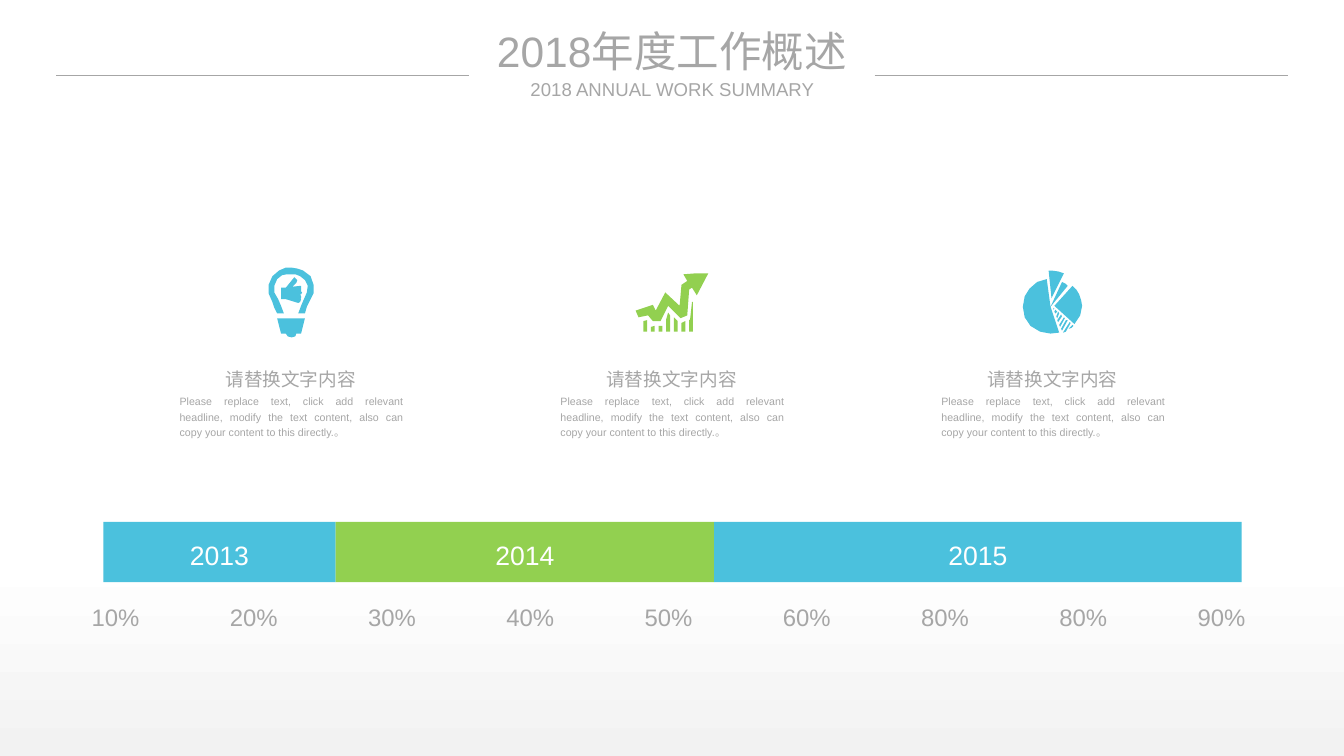
from lxml import etree
from pptx import Presentation
from pptx.dml.color import RGBColor
from pptx.enum.shapes import MSO_CONNECTOR, MSO_SHAPE
from pptx.enum.text import MSO_ANCHOR, MSO_AUTO_SIZE, PP_ALIGN
from pptx.oxml.ns import qn
from pptx.util import Pt

RECT = MSO_SHAPE.RECTANGLE
STRAIGHT = MSO_CONNECTOR.STRAIGHT
TOP, MIDDLE = MSO_ANCHOR.TOP, MSO_ANCHOR.MIDDLE
CENTER, JUSTIFY = PP_ALIGN.CENTER, PP_ALIGN.JUSTIFY
GROW = MSO_AUTO_SIZE.SHAPE_TO_FIT_TEXT

WIDTH, HEIGHT = 1012.3, 569.5
FONT = "Arial"
COLORS = {"gray": "A6A6A6", "blue": "4BC1DD", "green": "92D050",
          "white": "FFFFFF", "shade": "F2F2F2"}

HEADING = "请替换文字内容"
BODY = ("Please replace text, click add relevant headline, modify the text "
        "content, also can copy your content to this directly.。")
CAPTION_X, CAPTION_STEP = 128.2, 286.9
PERCENTS = ["10%", "20%", "30%", "40%", "50%", "60%", "80%", "80%", "90%"]
PERCENT_X, PERCENT_STEP = 61.9, 104.13
BARS = [("2013", 175, "blue"), ("2014", 285.1, "green"), ("2015", 397.4, "blue")]
BAR_X = 77.8

# Icon outlines, in units of ICON_UNIT points from the icon's corner
ICON_UNIT = 0.72
BULB = [
    # Socket
    [(11, 54), (40, 54), (36, 70), (31, 70), (29.5, 73), (26, 74), (22, 73),
     (20, 70), (15, 70)],
    # Thumb
    [(36, 20), (36, 26), (37, 27), (36, 29), (35, 29), (36, 31), (36, 33),
     (35, 34), (36, 34), (35, 37), (33, 38), (20, 34), (15, 34), (15, 22),
     (20, 22), (29, 11), (31.7, 13.5), (31.4, 16.8), (27, 21)],
    # Glass
    [(11, 49), (18, 49), (15.4, 40.8), (12, 34), (8.5, 26.6), (8, 20),
     (10.9, 13.4), (16, 9), (20.6, 7.8), (26, 8), (30.5, 8.2), (35, 10),
     (40.1, 14.3), (43, 20), (42, 26.6), (39, 34), (35.6, 40.8), (33, 49),
     (40, 49), (42.1, 42.5), (45, 36), (48.9, 27.9), (49, 19), (45.8, 10),
     (38, 4), (32, 1.6), (26, 1), (19.5, 1.4), (13, 4), (5.6, 9.6), (2, 19),
     (2.1, 28), (6, 37), (8.5, 42.6)],
]
GROWTH = [
    # Arrow
    [(76, 0), (64, 23), (59, 15), (56, 17), (54, 44), (47, 47), (34, 34),
     (26, 50), (18, 50), (13, 44), (3, 46), (0, 39), (18, 33), (21, 39),
     (31, 20), (46, 34), (48, 12), (54, 8), (50, 1), (63, 0)],
    # Columns
    [(8, 61), (12, 61), (12, 49), (8, 50)],
    [(16, 61), (20, 61), (20, 55), (16, 56)],
    [(24, 61), (28, 61), (28, 55), (24, 55)],
    [(32, 61), (36, 61), (36, 44), (34, 41), (32, 48)],
    [(40, 61), (44, 61), (44, 50), (40, 46)],
    [(48, 61), (52, 61), (52, 50), (48, 52)],
    [(56, 61), (60, 61), (60, 30), (59, 30), (57, 48), (56, 49)],
]
PIE = [
    # Main slices
    [(52, 16), (56, 20), (59.2, 25), (61.4, 30.7), (62, 37), (59.9, 47.2),
     (54, 56), (33, 37)],
    [(41, 12), (29, 38), (25, 9), (15.2, 12.3), (7.2, 18.6), (1.9, 27.4),
     (0, 38), (2.3, 49.1), (8.5, 58), (17.7, 63.8), (29, 66), (38, 65),
     (29, 38), (47, 16), (44.7, 13.5)],
    [(30, 0), (27, 0), (30, 29), (43, 3), (36.6, 0.9)],
    # Hatched slice
    [(53, 58), (51, 60), (48, 61), (52, 57)],
    [(45, 64), (50, 55), (49, 54), (42, 65)],
    [(41, 63), (47, 52), (45, 52), (40, 61)],
    [(39, 59), (44, 50), (43, 49), (38, 57)],
    [(37, 54), (41, 48), (40, 46), (36, 52)],
    [(36, 50), (38, 45), (37, 43), (35, 48)],
    [(34, 45), (36, 43), (34, 41), (33, 43)],
    [(32, 41), (32, 39), (33, 40)],
]
ICONS = [(BULB, 200.9, 200.9, "blue"), (GROWTH, 478.8, 205.9, "green"),
         (PIE, 770.4, 203.8, "blue")]


def rgb(name):
    return RGBColor.from_string(COLORS[name])


def write(sp, text, size, color="gray", align=JUSTIFY, anchor=TOP,
          spacing=1.2, wrap=True, inset=None):
    tf = sp.text_frame
    tf.word_wrap = wrap
    tf.vertical_anchor = anchor
    if inset is not None:
        tf.margin_left = tf.margin_right = Pt(inset)
        tf.margin_top = tf.margin_bottom = Pt(inset)
    p = tf.paragraphs[0]
    p.alignment = align
    p.line_spacing = spacing
    r = p.add_run()
    r.text = text
    r.font.name = FONT
    r.font.size = Pt(size)
    r.font.color.rgb = rgb(color)


def add_text(s, x, y, w, h, text, size, **fmt):
    sp = s.shapes.add_textbox(Pt(x), Pt(y), Pt(w), Pt(h))
    write(sp, text, size, **fmt)
    sp.text_frame.auto_size = GROW
    return sp


def add_rect(s, x, y, w, h):
    sp = s.shapes.add_shape(RECT, Pt(x), Pt(y), Pt(w), Pt(h))
    sp.shadow.inherit = False
    sp.line.fill.background()
    return sp


def add_backdrop(s):
    sp = add_rect(s, 0, 0, WIDTH, HEIGHT)
    sp.fill.gradient()
    sp.fill.gradient_angle = 90
    for stop, color, pos in zip(sp.fill.gradient_stops, ("shade", "white"), (0, 0.26)):
        stop.color.rgb = rgb(color)
        stop.position = pos
    s.shapes._spTree.insert(2, sp._element)


def add_title(s, text):
    sp = s.shapes.title
    sp.left, sp.top, sp.width, sp.height = Pt(350.6), Pt(18.7), Pt(311), Pt(38.9)
    write(sp, text, 32, align=CENTER, anchor=MIDDLE, spacing=1.0, inset=0)
    sp.text_frame.auto_size = MSO_AUTO_SIZE.NONE


def add_rule(s, x1, x2, y):
    sp = s.shapes.add_connector(STRAIGHT, Pt(x1), Pt(y), Pt(x2), Pt(y))
    sp.line.color.rgb = rgb("gray")
    sp.line.width = Pt(1)
    etree.SubElement(sp._element.spPr, qn("a:effectLst"))
    return sp


def add_icon(s, contours, x, y, color):
    first, *rest = contours
    fb = s.shapes.build_freeform(*first[0], scale=Pt(ICON_UNIT))
    fb.add_line_segments(first[1:], close=True)
    for points in rest:
        fb.move_to(*points[0])
        fb.add_line_segments(points[1:], close=True)
    sp = fb.convert_to_shape(Pt(x), Pt(y))
    sp.shadow.inherit = False
    sp.fill.solid()
    sp.fill.fore_color.rgb = rgb(color)
    sp.line.fill.background()


def add_caption(s, x):
    heading = add_text(s, x + 34.5, 270, 113.8, 25.9, HEADING, 14, wrap=False)
    body = add_text(s, x, 292.3, 182.9, 42.5, BODY, 8)
    s.shapes.add_group_shape([heading, body])


def add_bar(s, x, w, year, color):
    sp = add_rect(s, x, 393.1, w, 45.4)
    sp.fill.solid()
    sp.fill.fore_color.rgb = rgb(color)
    write(sp, year, 20, color="white", align=CENTER, anchor=MIDDLE)


def main():
    prs = Presentation()
    prs.slide_width, prs.slide_height = Pt(WIDTH), Pt(HEIGHT)
    s = prs.slides.add_slide(prs.slide_layouts[5])
    add_backdrop(s)

    # Header
    add_title(s, "2018年度工作概述")
    add_text(s, 396, 58.3, 221, 17.3, "2018 ANNUAL WORK SUMMARY", 14,
             align=CENTER, anchor=MIDDLE, spacing=1.0, inset=0)
    rules = [add_rule(s, x, x + 311, 56.9) for x in (42.5, 658.8)]
    s.shapes.add_group_shape(rules)

    # Icons with captions
    for i, icon in enumerate(ICONS):
        add_icon(s, *icon)
        add_caption(s, CAPTION_X + i * CAPTION_STEP)

    # Year bars
    x = BAR_X
    for year, w, color in BARS:
        add_bar(s, x, w, year, color)
        x += w

    # Percent scale
    for i, percent in enumerate(PERCENTS):
        add_text(s, PERCENT_X + i * PERCENT_STEP, 446.4, 51.1, 31, percent, 18,
                 wrap=False)

    prs.save("out.pptx")


if __name__ == "__main__":
    main()
